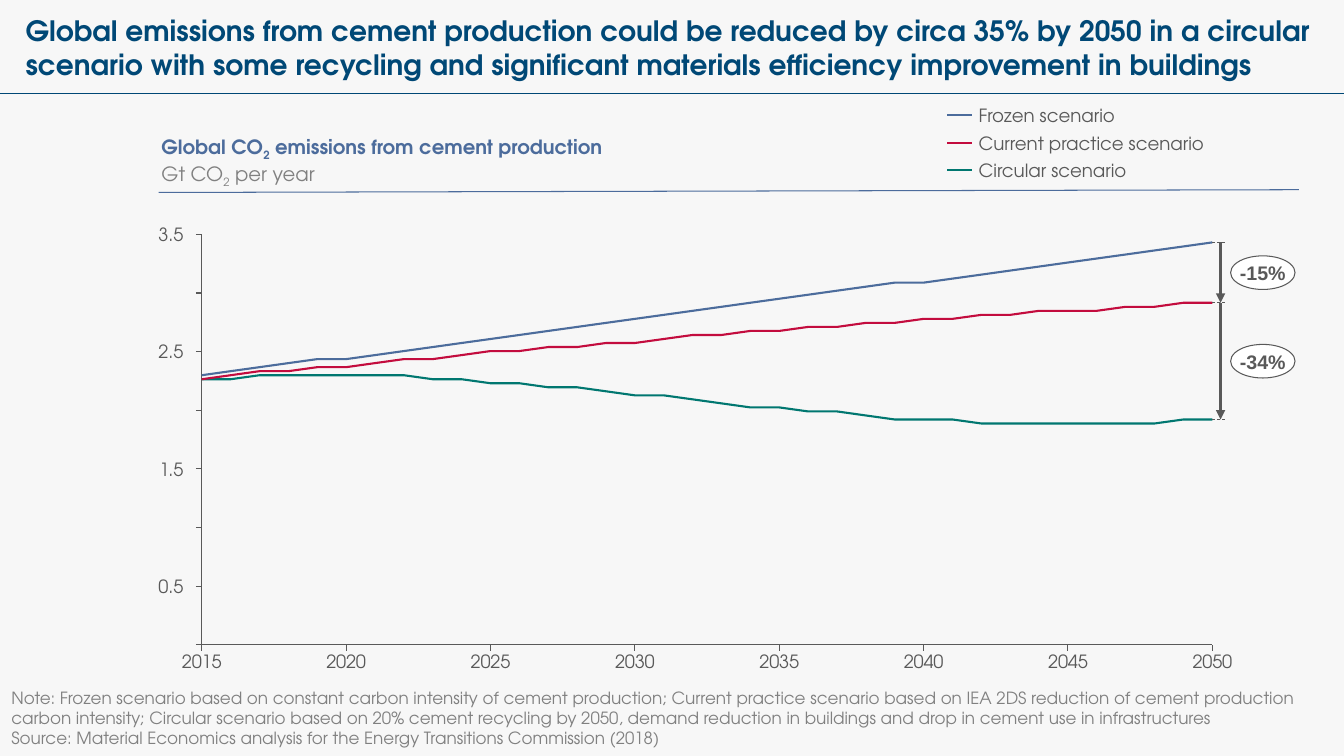
import pptx
import pptx.util
import pptx.chart.data
import pptx.dml.color
import pptx.enum.chart
import pptx.enum.dml
import pptx.enum.shapes
import pptx.enum.text
import pptx.oxml
import pptx.oxml.ns

Pt = pptx.util.Pt
ALIGN = pptx.enum.text.PP_ALIGN
ANCHOR = pptx.enum.text.MSO_ANCHOR
COLORS = {
    "background": "F7F7F7", "title": "004876", "text": "595959", "muted": "808080",
    "frozen": "4C6C9C", "current": "C30C3E", "circular": "007770", "white": "FFFFFF",
}
FONT = "TeX Gyre Adventor"
AXIS_TOP = 102
START, END = 2015, 2050
SCENARIOS = [
    ("Frozen scenario", "frozen",
     [67, 68, 69, 70, 71, 71, 72, 73, 74, 75, 76, 77, 78, 79, 80, 81, 82, 83,
      84, 85, 86, 87, 88, 89, 90, 90, 91, 92, 93, 94, 95, 96, 97, 98, 99, 100]),
    ("Current practice scenario", "current",
     [66, 67, 68, 68, 69, 69, 70, 71, 71, 72, 73, 73, 74, 74, 75, 75, 76, 77,
      77, 78, 78, 79, 79, 80, 80, 81, 81, 82, 82, 83, 83, 83, 84, 84, 85, 85]),
    ("Circular scenario", "circular",
     [66, 66, 67, 67, 67, 67, 67, 67, 66, 66, 65, 65, 64, 64, 63, 62, 62, 61,
      60, 59, 59, 58, 58, 57, 56, 56, 56, 55, 55, 55, 55, 55, 55, 55, 56, 56]),
]


def color(name):
    return pptx.dml.color.RGBColor.from_string(COLORS[name])


def set_font(font, size, shade, bold=False, name=FONT):
    font.name, font.size, font.bold = name, Pt(size), bold
    font.color.rgb = color(shade)


def fill_frame(frame, anchor, wrap=True, insets=(0, 0, 0, 0)):
    frame.word_wrap = wrap
    frame.vertical_anchor = anchor
    frame.margin_left, frame.margin_top, frame.margin_right, frame.margin_bottom = map(Pt, insets)
    return frame


def add_text(page, box, text, size, shade, bold=False, anchor=ANCHOR.MIDDLE,
             align=ALIGN.LEFT, wrap=False, insets=(0, 0, 0, 0)):
    frame = fill_frame(page.shapes.add_textbox(*map(Pt, box)).text_frame, anchor, wrap, insets)
    for index, line in enumerate(text.split("\n")):
        para = frame.add_paragraph() if index else frame.paragraphs[0]
        para.text = line
        para.alignment = align
        set_font(para.font, size, shade, bold)


def add_line(page, start, end, shade, width, dashed=False, arrow=False):
    line = page.shapes.add_connector(
        pptx.enum.shapes.MSO_CONNECTOR.STRAIGHT, *map(Pt, (*start, *end)))
    line.line.color.rgb = color(shade)
    line.line.width = Pt(width)
    if dashed:
        line.line.dash_style = pptx.enum.dml.MSO_LINE.DASH
    properties = line._element.spPr
    if arrow:
        tail = pptx.oxml.parse_xml(
            f'<a:tailEnd {pptx.oxml.ns.nsdecls("a")} type="triangle"/>')
        line.line._get_or_add_ln().append(tail)
    properties.append(pptx.oxml.parse_xml(f'<a:effectLst {pptx.oxml.ns.nsdecls("a")}/>'))


def add_header(page, box):
    left, top, width, height = box
    add_text(page, (left + 18.3, top + 10, width - 28, 48),
             "Global emissions from cement production could be reduced by circa 35% by 2050 "
             "in a circular scenario with some recycling and significant materials efficiency "
             "improvement in buildings", 20, "title", True, ANCHOR.TOP, wrap=True)
    add_line(page, (left, top + height), (left + width, top + height), "title", 0.75)


def add_chart_heading(page, box):
    left, top, width, height = box
    add_line(page, (left, top + height + 1.5), (left + width, top + height - 0.5), "frozen", 0.75)
    banner = page.shapes.add_shape(pptx.enum.shapes.MSO_SHAPE.LEFT_RIGHT_ARROW,
                                   *map(Pt, (left + 2, top, 912, height)))
    banner.adjustments[0], banner.adjustments[1] = 1, 0
    banner.shadow.inherit = False
    banner.fill.background()
    banner.line.fill.background()
    frame = fill_frame(banner.text_frame, ANCHOR.BOTTOM, insets=(0, 0, 0, 1.5))
    lines = [("Global CO", " emissions from cement production", "frozen", True),
             ("Gt CO", " per year", "muted", False)]
    for index, (before, after, shade, bold) in enumerate(lines):
        para = frame.add_paragraph() if index else frame.paragraphs[0]
        para.alignment = ALIGN.LEFT
        set_font(para.font, 14, shade, bold)
        for text in (before, "2", after):
            span = para.add_run()
            span.text = text
            if text == "2":
                span.font._element.set("baseline", "-25000")


def add_legend(page, box):
    left, top, width, height = box
    row = height / len(SCENARIOS)
    for index, (name, shade, _) in enumerate(SCENARIOS):
        middle = top + row * (index + 0.5)
        add_line(page, (left, middle), (left + 18, middle), shade, 1.5)
        add_text(page, (left + 22.6, middle - 8, width - 22.6, 16), name, 13, "text")


def style_axis(axis, low, high, step):
    axis.minimum_scale, axis.maximum_scale, axis.major_unit = low, high, step
    axis.has_major_gridlines = False
    axis.major_tick_mark = pptx.enum.chart.XL_TICK_MARK.OUTSIDE
    axis.format.line.color.rgb = color("text")
    axis.format.line.width = Pt(0.75)
    set_font(axis.tick_labels.font, 13, "text")


def add_emissions_chart(page, box):
    left, top, width, height = box
    data = pptx.chart.data.XyChartData()
    for name, _, values in SCENARIOS:
        series = data.add_series(name)
        for year, value in enumerate(values, START):
            series.add_data_point(year, value)
    chart = page.shapes.add_chart(
        pptx.enum.chart.XL_CHART_TYPE.XY_SCATTER_LINES_NO_MARKERS, *map(Pt, box), data).chart
    chart.has_legend = chart.has_title = False
    set_font(chart.font, 10, "text")
    chart.plots[0].vary_by_categories = False
    for series, (_, shade, _) in zip(chart.plots[0].series, SCENARIOS):
        series.smooth = False
        series.marker.style = pptx.enum.chart.XL_MARKER_STYLE.NONE
        series.format.line.color.rgb = color(shade)
        series.format.line.width = Pt(1.5)
    style_axis(chart.category_axis, START, END, 5)
    chart.category_axis.tick_labels.number_format = "0"
    chart.category_axis.tick_labels.number_format_is_linked = False
    style_axis(chart.value_axis, 0, AXIS_TOP, AXIS_TOP / 7)
    chart.value_axis.tick_label_position = pptx.enum.chart.XL_TICK_LABEL_POSITION.NONE

    share = {"x": 0.035, "y": 0.02, "w": 0.931, "h": 0.895}
    places = "".join(f'<c:{key} val="{value}"/>' for key, value in share.items())
    area = chart._chartSpace.chart.plotArea
    for layout in area.findall(pptx.oxml.ns.qn("c:layout")):
        area.remove(layout)
    area.insert(0, pptx.oxml.parse_xml(
        f'<c:layout {pptx.oxml.ns.nsdecls("c")}><c:manualLayout><c:layoutTarget val="inner"/>'
        f'<c:xMode val="edge"/><c:yMode val="edge"/>{places}</c:manualLayout></c:layout>'))

    plot_height = share["h"] * height
    plot_bottom = top + share["y"] * height + plot_height
    for label in (0.5, 1.5, 2.5, 3.5):
        middle = plot_bottom - plot_height * label / 3.5
        add_text(page, (left - 4, middle - 8, 18, 16), str(label), 13, "text",
                 align=ALIGN.RIGHT)
    plot_right = left + (share["x"] + share["w"]) * width
    ends = [plot_bottom - plot_height * values[-1] / AXIS_TOP for _, _, values in SCENARIOS]
    add_reductions(page, plot_right, ends)


def add_reductions(page, left, ends):
    for end in ends:
        add_line(page, (left, end), (left + 9.5, end), "text", 0.5, dashed=True)
    for label, start, end in zip(("-15%", "-34%"), ends, ends[1:]):
        add_line(page, (left + 5.8, start), (left + 5.8, end), "text", 2.25, arrow=True)
        middle = (start + end) / 2
        bubble = page.shapes.add_shape(pptx.enum.shapes.MSO_SHAPE.OVAL,
                                       *map(Pt, (left + 13, middle - 12, 46, 24)))
        bubble.shadow.inherit = False
        bubble.fill.solid()
        bubble.fill.fore_color.rgb = color("white")
        bubble.line.color.rgb = color("text")
        bubble.line.width = Pt(0.75)
        para = fill_frame(bubble.text_frame, ANCHOR.MIDDLE, False).paragraphs[0]
        para.text = label
        para.alignment = ALIGN.CENTER
        set_font(para.font, 14, "text", True, "Arial")


def add_notes(page, box):
    add_text(page, box,
             "Note: Frozen scenario based on constant carbon intensity of cement production; "
             "Current practice scenario based on IEA 2DS reduction of cement production carbon "
             "intensity; Circular scenario based on 20% cement recycling by 2050, demand "
             "reduction in buildings and drop in cement use in infrastructures\n"
             "Source: Material Economics analysis for the Energy Transitions Commission (2018)",
             12, "muted", anchor=ANCHOR.BOTTOM, wrap=True, insets=(7.2, 3.6, 7.2, 3.6))


def main():
    deck = pptx.Presentation()
    deck.slide_width, deck.slide_height = Pt(960), Pt(540)
    page = deck.slides.add_slide(deck.slide_layouts[6])
    page.background.fill.solid()
    page.background.fill.fore_color.rgb = color("background")
    add_header(page, (0, 0, 960, 67))
    add_emissions_chart(page, (117, 160.9, 775.4, 327.6))
    add_legend(page, (676.5, 72.6, 184, 58.8))
    add_chart_heading(page, (113.3, 101, 814.5, 35))
    add_notes(page, (1, 486.7, 949.7, 51))
    deck.save("out.pptx")


if __name__ == "__main__":
    main()
